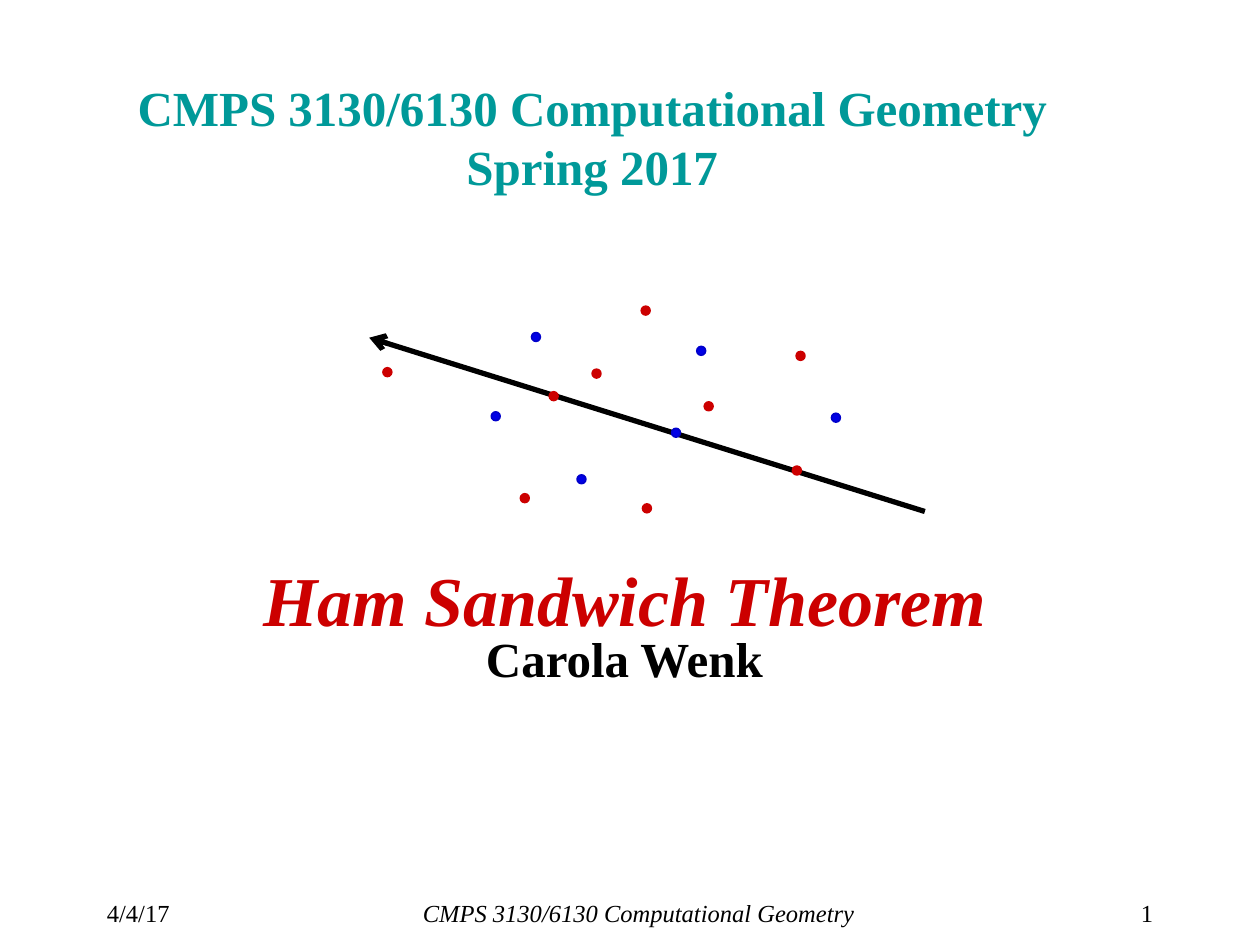
import pptx
import pptx.dml.color
import pptx.enum.shapes
import pptx.enum.text
import pptx.oxml
import pptx.oxml.ns
import pptx.util
from dataclasses import dataclass

Pt = pptx.util.Pt
RGB = pptx.dml.color.RGBColor.from_string
ALIGN = pptx.enum.text.PP_ALIGN
ANCHOR = pptx.enum.text.MSO_ANCHOR


@dataclass(frozen=True)
class Theme:
    font: str = "Times New Roman"
    ink: str = "000000"
    teal: str = "009999"
    red: str = "CC0000"
    blue: str = "0000E6"
    blue_edge: str = "0000CC"
    topic_size: int = 40
    title_size: int = 28
    footer_size: int = 14


class Deck:
    """Holds the theme and the slide being drawn."""

    def __init__(self, prs, theme):
        self.theme = theme
        self.s = prs.slides.add_slide(prs.slide_layouts[6])

    def text(self, box, lines, align=ALIGN.LEFT, anchor=ANCHOR.TOP,
             spacing=None, before=None):
        """Add one paragraph; each line is (text, size, colour, bold, italic)."""
        tf = self.s.shapes.add_textbox(*map(Pt, box)).text_frame
        tf.word_wrap = True
        tf.vertical_anchor = anchor
        p = tf.paragraphs[0]
        p.alignment = align
        if spacing:
            p.line_spacing = spacing
        if before:
            p.space_before = Pt(before)
        for i, (words, size, colour, bold, italic) in enumerate(lines):
            if i:
                p.add_line_break()
            r = p.add_run()
            r.text = words
            r.font.name = self.theme.font
            r.font.size = Pt(size)
            r.font.bold, r.font.italic = bold, italic
            r.font.color.rgb = RGB(colour)

    def group(self):
        return self.s.shapes.add_group_shape()

    def arrow(self, group, tip, tail, width):
        sp = group.shapes.add_connector(
            pptx.enum.shapes.MSO_CONNECTOR.STRAIGHT, *map(Pt, tip + tail))
        sp.line.color.rgb = RGB(self.theme.ink)
        sp.line.width = Pt(width)
        ln = sp.line._get_or_add_ln()
        pptx.oxml.ns.qn("a:headEnd")
        ln.append(pptx.oxml.parse_xml(
            f'<a:headEnd {pptx.oxml.ns.nsdecls("a")} type="arrow"/>'))
        sp._element.spPr.append(pptx.oxml.parse_xml(
            f'<a:effectLst {pptx.oxml.ns.nsdecls("a")}/>'))

    def dots(self, group, corners, fill, edge, size=5):
        for x, y in corners:
            sp = group.shapes.add_shape(
                pptx.enum.shapes.MSO_SHAPE.OVAL, Pt(x), Pt(y), Pt(size), Pt(size))
            sp.shadow.inherit = False
            sp.fill.solid()
            sp.fill.fore_color.rgb = RGB(fill)
            sp.line.color.rgb = RGB(edge)
            sp.line.width = Pt(1)


RED_POINTS = [(297.4, 282.2), (367.2, 288), (402.5, 229.7), (452.9, 266.4),
              (366.5, 175), (455, 200.9), (313.9, 223.9), (218.9, 210.2),
              (338.4, 211)]
BLUE_POINTS = [(329.8, 271.4), (383.8, 244.8), (280.8, 235.4),
               (475.2, 236.2), (303.8, 190.1), (398.2, 198)]


def main():
    prs = pptx.Presentation()
    prs.slide_width, prs.slide_height = Pt(720), Pt(540)
    t = Theme()
    deck = Deck(prs, t)

    footers = [(54, 68.4, "4/4/17", ALIGN.LEFT, False),
               (136.8, 456.5, "CMPS 3130/6130 Computational Geometry",
                ALIGN.CENTER, True),
               (607, 59, "1", ALIGN.RIGHT, False)]
    for left, width, words, align, italic in footers:
        deck.text((left, 509.8, width, 18),
                  [(words, t.footer_size, t.ink, False, italic)], align)

    deck.text((17.3, 38.9, 642.2, 77.8),
              [("CMPS 3130/6130 Computational Geometry",
                t.title_size, t.teal, True, False),
               ("Spring 2017", t.title_size, t.teal, True, False)],
              ALIGN.CENTER, ANCHOR.MIDDLE)
    deck.text((23.8, 324, 666, 120.2),
              [("Ham Sandwich Theorem", t.topic_size, t.red, True, True),
               ("Carola Wenk", t.title_size, t.ink, True, False)],
              ALIGN.CENTER, spacing=0.8, before=5)

    diagram = deck.group()
    deck.arrow(diagram, (211, 193), (528.5, 292.3), 3)
    deck.dots(diagram, RED_POINTS, t.red, t.red)
    deck.dots(diagram, BLUE_POINTS, t.blue, t.blue_edge)

    prs.save("out.pptx")


if __name__ == "__main__":
    main()
